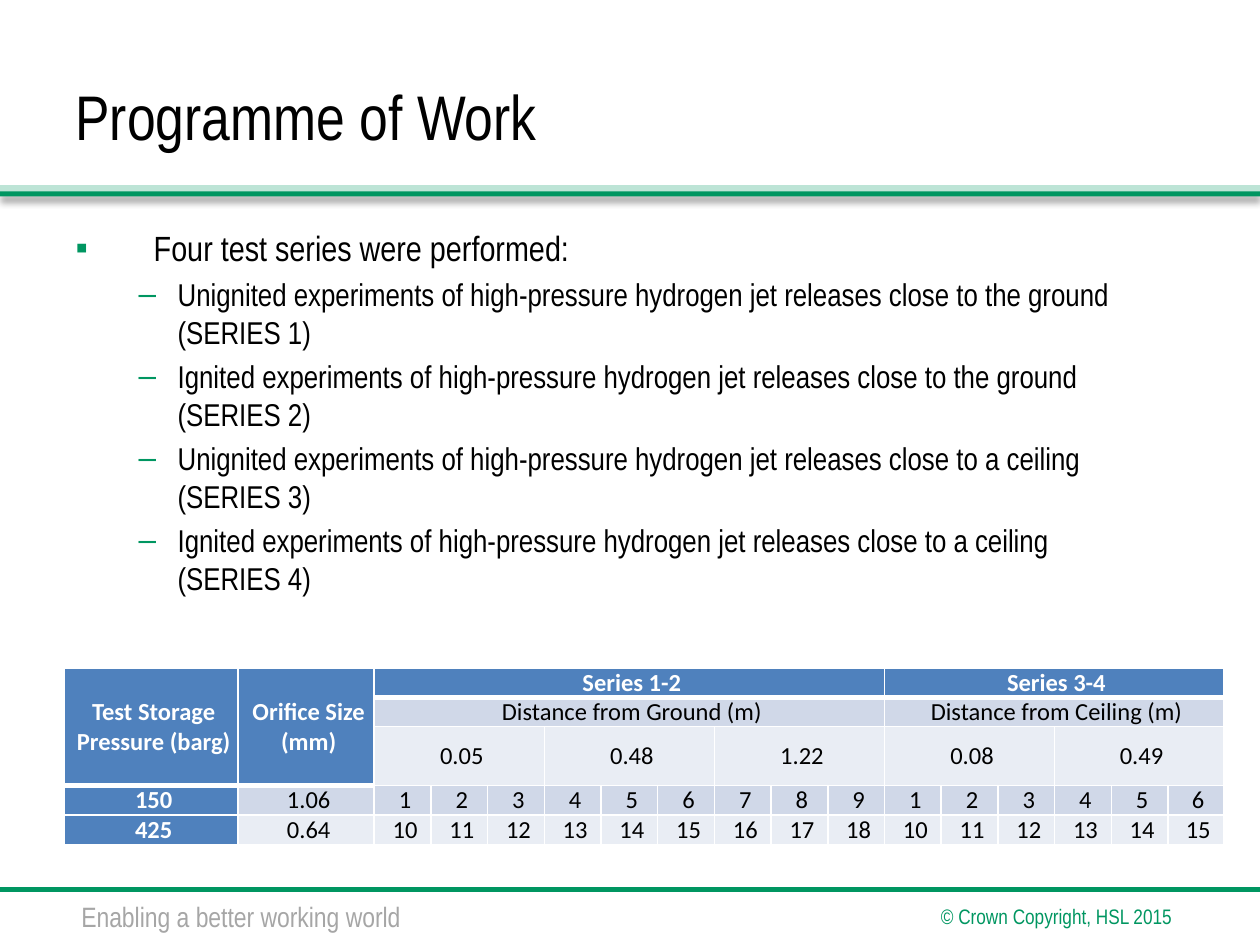
"""Build the programme of work slide with its test table."""
from typing import NamedTuple

from lxml import etree
from pptx import Presentation
from pptx.dml.color import RGBColor
from pptx.enum.shapes import MSO_CONNECTOR, MSO_SHAPE
from pptx.enum.text import MSO_ANCHOR, PP_ALIGN
from pptx.oxml import parse_xml
from pptx.oxml.ns import nsdecls, qn
from pptx.util import Inches, Pt

LEFT, CENTER, RIGHT = PP_ALIGN.LEFT, PP_ALIGN.CENTER, PP_ALIGN.RIGHT
MIDDLE, TOP = MSO_ANCHOR.MIDDLE, MSO_ANCHOR.TOP
RECT, LINE = MSO_SHAPE.RECTANGLE, MSO_CONNECTOR.STRAIGHT

BLACK = RGBColor(0x00, 0x00, 0x00)
WHITE = RGBColor(0xFF, 0xFF, 0xFF)
GREEN = RGBColor(0x00, 0x96, 0x61)
MINT = RGBColor(0xBD, 0xE4, 0xD6)
GREY = RGBColor(0xA6, 0xA6, 0xA6)
BLUE = RGBColor(0x4F, 0x81, 0xBD)
DARK = RGBColor(0xD0, 0xD8, 0xE8)
PALE = RGBColor(0xE9, 0xED, 0xF4)
NARROW, SANS = "Arial Narrow", "Calibri"


class Note(NamedTuple):
    text: str
    box: tuple
    size: int
    color: RGBColor
    align: PP_ALIGN


class Band(NamedTuple):
    top: float
    color: RGBColor
    shade: bool


class Item(NamedTuple):
    text: str
    level: int
    size: int
    margin: float
    hang: float
    before: float
    mark: str


class Head(NamedTuple):
    text: str
    row: int
    col: int
    rows: int
    cols: int


NOTES = [
    Note("Enabling a better working world", (0.42, 7.09, 2.86, 0.37), 16, GREY, RIGHT),
    Note("© Crown Copyright, HSL 2015", (7.3, 7.12, 2.17, 0.3), 12, GREEN, CENTER),
]
BANDS = [Band(1.51, GREEN, True), Band(1.47, MINT, False)]
TESTS = [
    "Unignited experiments of high-pressure hydrogen jet releases close to the ground (SERIES 1)",
    "Ignited experiments of high-pressure hydrogen jet releases close to the ground (SERIES 2)",
    "Unignited experiments of high-pressure hydrogen jet releases close to a ceiling (SERIES 3)",
    "Ignited experiments of high-pressure hydrogen jet releases close to a ceiling\v(SERIES 4)",
]
ITEMS = [Item("Four test series were performed:", 0, 20, 0.62, 0.62, 0, "▪")]
ITEMS += [Item(text, 1, 18, 0.81, 0.31, 3.6, "–") for text in TESTS]

GAPS = ["0.05", "0.48", "1.22", "0.08", "0.49"]
HEADS = [
    Head("Test Storage Pressure (barg)", 0, 0, 3, 1),
    Head("Orifice Size (mm)", 0, 1, 3, 1),
    Head("Series 1-2", 0, 2, 1, 9),
    Head("Series 3-4", 0, 11, 1, 6),
    Head("Distance from Ground (m)", 1, 2, 1, 9),
    Head("Distance from Ceiling (m)", 1, 11, 1, 6),
]
HEADS += [Head(gap, 2, 2 + 3 * i, 1, 3) for i, gap in enumerate(GAPS)]
RUNS = [
    ["150", "1.06", *range(1, 10), *range(1, 7)],
    ["425", "0.64", *range(10, 19), *range(10, 16)],
]
WIDTHS = [1.38, 1.08] + [0.45] * 14 + [0.44]


def style(para, face: str, size: int, color: RGBColor, bold: bool = False) -> None:
    """Format every run of a paragraph."""
    for run in para.runs:
        font = run.font
        font.name, font.size, font.bold = face, Pt(size), bold
        font.color.rgb = color


def add_note(slide, note: Note) -> None:
    """Draw one line of footer text."""
    frame = slide.shapes.add_textbox(*map(Inches, note.box)).text_frame
    frame.word_wrap = True
    frame.text = note.text
    para = frame.paragraphs[0]
    para.alignment = note.align
    style(para, NARROW, note.size, note.color)


def add_band(slide, band: Band) -> None:
    """Draw one stripe across the slide."""
    box = map(Inches, (0, band.top, 10, 0.05))
    shape = slide.shapes.add_shape(RECT, *box)
    shape.shadow.inherit = False
    shape.fill.solid()
    shape.fill.fore_color.rgb = band.color
    shape.line.fill.background()
    if band.shade:
        glow = shape._element.spPr.find(qn("a:effectLst"))
        glow.append(parse_xml(
            f'<a:outerShdw {nsdecls("a")} blurRad="{Pt(4)}" dist="{Pt(3)}" dir="5400000" '
            'rotWithShape="0"><a:srgbClr val="000000"><a:alpha val="40000"/>'
            '</a:srgbClr></a:outerShdw>'))


def add_rule(slide) -> None:
    """Draw the line above the footer."""
    rule = slide.shapes.add_connector(LINE, 0, Inches(7.06), Inches(10), Inches(7.06))
    rule.line.color.rgb = GREEN
    rule.line.width = Pt(2.5)
    etree.SubElement(rule._element.spPr, qn("a:effectLst"))


def place(shape, box: tuple) -> None:
    """Move a shape to its box."""
    shape.left, shape.top, shape.width, shape.height = map(Inches, box)


def fill_title(shape) -> None:
    """Write the slide title."""
    place(shape, (0.5, 0.48, 7.85, 0.87))
    frame = shape.text_frame
    frame.text = "Programme of Work"
    frame.vertical_anchor = MIDDLE
    frame.paragraphs[0].alignment = LEFT
    style(frame.paragraphs[0], NARROW, 36, BLACK)


def fill_list(shape) -> None:
    """Write the list of test series."""
    place(shape, (0.5, 1.75, 9, 4.95))
    frame = shape.text_frame
    frame.vertical_anchor = TOP
    for i, item in enumerate(ITEMS):
        para = frame.add_paragraph() if i else frame.paragraphs[0]
        para.text, para.level = item.text, item.level
        para.space_before = Pt(item.before)
        props = para._p.get_or_add_pPr()
        props.set("marL", str(Inches(item.margin)))
        props.set("indent", str(-Inches(item.hang)))
        color = etree.SubElement(props, qn("a:buClr"))
        etree.SubElement(color, qn("a:srgbClr"), val=str(GREEN))
        etree.SubElement(props, qn("a:buFont"), typeface="Arial")
        etree.SubElement(props, qn("a:buChar"), char=item.mark)
        style(para, NARROW, item.size, BLACK)


def set_cell(cell, row: int, col: int) -> None:
    """Give a cell its borders, fill, margins and font."""
    head = row == 0 or col == 0 or (col == 1 and row < 3)
    side = 0 if row > 2 and col > 1 else Inches(0.04)
    cell.margin_left = cell.margin_right = side
    cell.margin_top = cell.margin_bottom = 0
    cell.vertical_anchor = MIDDLE
    props = cell._tc.get_or_add_tcPr()
    for edge in "LRTB":
        width = Pt(3 if edge == "B" and head and row < 3 else 1)
        props.append(parse_xml(
            f'<a:ln{edge} {nsdecls("a")} w="{width}"><a:solidFill>'
            f'<a:srgbClr val="{WHITE}"/></a:solidFill></a:ln{edge}>'))
    cell.fill.solid()
    cell.fill.fore_color.rgb = BLUE if head else DARK if row % 2 else PALE
    para = cell.text_frame.paragraphs[0]
    para.alignment = CENTER
    para._p.get_or_add_pPr().set("marL", str(Inches(0.04)))
    para.font.size = Pt(14)
    style(para, SANS, 14, WHITE if head else BLACK, head)


def add_grid(slide) -> None:
    """Draw the table of tests."""
    box = map(Inches, (0.51, 5.3, 9.14, 1.17))
    grid = slide.shapes.add_table(5, len(WIDTHS), *box).table
    for col, width in zip(grid.columns, WIDTHS):
        col.width = Inches(width)
    for head in HEADS:
        cell = grid.cell(head.row, head.col)
        cell.merge(grid.cell(head.row + head.rows - 1, head.col + head.cols - 1))
        cell.text = head.text
    for r, run in enumerate(RUNS, 3):
        for c, value in enumerate(run):
            grid.cell(r, c).text = str(value)
    for r in range(5):
        for c in range(len(WIDTHS)):
            set_cell(grid.cell(r, c), r, c)


def main() -> None:
    """Build and save the slide."""
    deck = Presentation()
    deck.slide_width, deck.slide_height = Inches(10), Inches(7.5)
    slide = deck.slides.add_slide(deck.slide_layouts[1])
    add_rule(slide)
    for band in BANDS:
        add_band(slide, band)
    for note in NOTES:
        add_note(slide, note)
    fill_title(slide.shapes.title)
    fill_list(slide.placeholders[1])
    add_grid(slide)
    deck.save("out.pptx")


if __name__ == "__main__":
    main()
